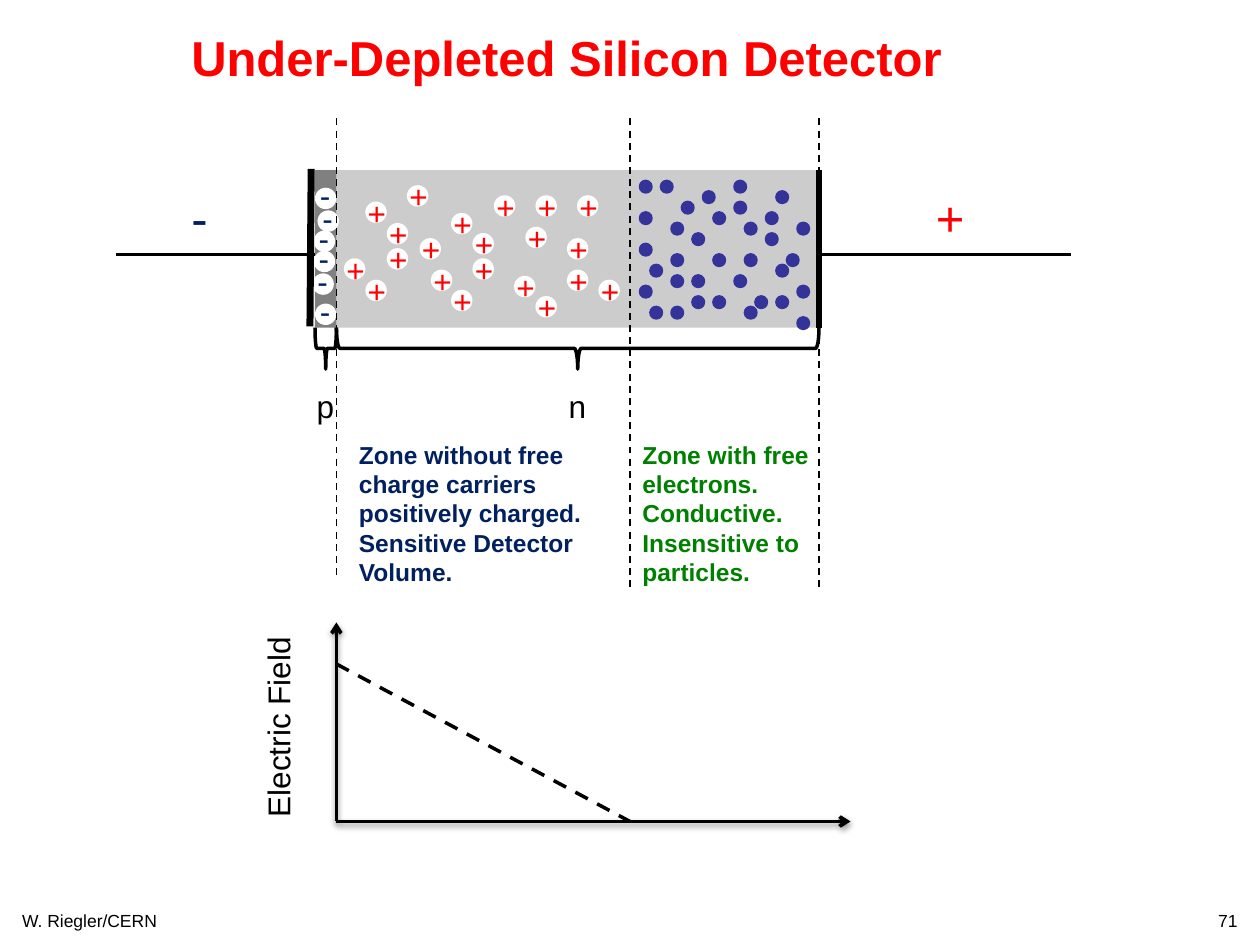
from dataclasses import dataclass
from lxml import etree
from pptx import Presentation
from pptx.dml.color import RGBColor as Rgb
from pptx.enum.dml import MSO_LINE as Dash
from pptx.enum.shapes import MSO_CONNECTOR as Wire, MSO_SHAPE as Shape
from pptx.enum.text import PP_ALIGN as Align
from pptx.oxml import parse_xml
from pptx.oxml.ns import nsdecls, qn
from pptx.util import Inches, Pt


@dataclass(frozen=True)
class Theme:
    font: str = "Arial"
    black: str = "000000"
    white: str = "FFFFFF"
    red: str = "FF0000"
    navy: str = "002060"
    green: str = "008000"
    blue: str = "333399"
    light: str = "CCCCCC"
    dark: str = "808080"
    title: int = 28
    label: int = 18
    note: int = 14
    foot: int = 10


theme = Theme()
deck = Presentation()
deck.slide_width, deck.slide_height = Inches(10), Inches(7.5)
slide = deck.slides.add_slide(deck.slide_layouts[6])
shapes = slide.shapes


def write(home, text, at, size, color, bold=False, wrap=False, align=Align.LEFT):
    box = home.add_textbox(*map(Inches, at))
    frame = box.text_frame
    frame.word_wrap = wrap
    frame.text = text
    for para in frame.paragraphs:
        para.alignment = align
        font = para.runs[0].font
        font.name, font.size, font.bold = theme.font, Pt(size), bold
        font.color.rgb = Rgb.from_string(color)
    return box


def draw(start, end, width=2, dash=None, arrow=False):
    ends = map(Inches, (*start, *end))
    wire = shapes.add_connector(Wire.STRAIGHT, *ends)
    wire.line.width = Pt(width)
    wire.line.color.rgb = Rgb.from_string(theme.black)
    if dash:
        wire.line.dash_style = dash
    props = wire._element.spPr
    effect = etree.SubElement(props, qn("a:effectLst"))
    if arrow:
        etree.SubElement(wire.line._get_or_add_ln(), qn("a:tailEnd"), type="arrow")
        effect.append(parse_xml(
            f'<a:outerShdw {nsdecls("a")} blurRad="40000" dist="20000" dir="5400000" '
            f'rotWithShape="0"><a:srgbClr val="{theme.black}"><a:alpha val="38000"/>'
            '</a:srgbClr></a:outerShdw>'))


# Key positions across the detector
left, join, edge, right = 2.5, 2.67, 5, 6.5
top, base, mid = 1.35, 2.6, 2.02

# Title, footer and zone notes
write(shapes, "Under-Depleted Silicon Detector", (1.42, 0.17, 7.17, 0.57),
      theme.title, theme.red, bold=True, wrap=True)
write(shapes, "W. Riegler/CERN", (0, 7.17, 1.42, 0.34), theme.foot, theme.black,
      wrap=True, align=Align.CENTER)
write(shapes, "71", (9.5, 7.17, 0.42, 0.27), theme.foot, theme.black,
      wrap=True, align=Align.RIGHT)
write(shapes, "Zone without free charge carriers positively charged.\n"
      "Sensitive Detector Volume.", (2.75, 3.44, 2.25, 1.28),
      theme.note, theme.navy, bold=True, wrap=True)
write(shapes, "Zone with free electrons. Conductive.\nInsensitive to particles.",
      (edge, 3.44, 1.67, 1.28), theme.note, theme.green, bold=True, wrap=True)

# Doped regions
draw((right, mid), (8.5, mid))
for start, end, color in ((join, right, theme.light), (left, join, theme.dark)):
    area = shapes.add_shape(Shape.RECTANGLE, Inches(start), Inches(top),
                            Inches(end - start), Inches(base - top))
    area.fill.solid()
    area.fill.fore_color.rgb = Rgb.from_string(color)
    area.line.fill.background()
    area.shadow.inherit = False

# Free electrons: columns filled in each row of a 1/12 inch grid
step = 1 / 12
rows = ((1, 3, 10), (7, 14), (5, 10), (1, 8, 13), (4, 11, 16), (6, 13), (1,),
        (4, 8, 11, 15), (2, 14), (4, 6, 10), (1, 16), (6, 8, 12, 14),
        (2, 4, 11), (16,))
for row, cols in enumerate(rows):
    for col in cols:
        dot = shapes.add_shape(Shape.OVAL, Inches(edge + col * step),
                               Inches(1.44 + row * step), Inches(step), Inches(step))
        dot.fill.solid()
        dot.fill.fore_color.rgb = Rgb.from_string(theme.blue)
        dot.line.color.rgb = Rgb.from_string(theme.blue)
        dot.line.width = Pt(2)
        dot.shadow.inherit = False

# Fixed charges: a white disc with its sign
plus = ((3.58, 1.69), (3.75, 1.85), (3.92, 1.55), (4.08, 2.19), (4.25, 2.35),
        (3.42, 2.14), (4.17, 1.8), (3.58, 2.3), (3.75, 2.05), (2.9, 1.6),
        (3.07, 1.77), (3.23, 1.47), (4.25, 1.55), (2.73, 2.05), (3.33, 1.89),
        (2.9, 2.22), (3.07, 1.97), (4.5, 1.89), (4.58, 1.55), (4.75, 2.22),
        (4.5, 2.14))
minus = ((2.5, 2.41), (2.48, 2.17), (2.49, 1.99), (2.49, 1.83), (2.5, 1.49),
         (2.52, 1.67))
for sign, color, width, dx, dy, spots in (
        ("+", theme.red, 0.35, 0.08, 0.11, plus),
        ("-", theme.navy, 0.29, 0.06, 0.14, minus)):
    for x, y in spots:
        pair = shapes.add_group_shape().shapes
        disc = pair.add_shape(Shape.OVAL, Inches(x), Inches(y),
                              Inches(0.17), Inches(0.17))
        disc.fill.solid()
        disc.fill.fore_color.rgb = Rgb.from_string(theme.white)
        disc.line.fill.background()
        disc.shadow.inherit = False
        write(pair, sign, (x - dx, y - dy, width, 0.4), theme.label, color)

# Braces, turned to open upward, with the region names
depth = 0.33
for name, start, end in (("n", join, right), ("p", left, join)):
    span, center = end - start, (start + end) / 2
    brace = shapes.add_shape(Shape.RIGHT_BRACE, Inches(center - depth / 2),
                             Inches(base + depth / 2 - span / 2),
                             Inches(depth), Inches(span))
    brace.rotation = 90
    brace.fill.background()
    brace.line.color.rgb = Rgb.from_string(theme.black)
    brace.line.width = Pt(2)
    brace.shadow.inherit = False
    write(shapes, name, (center - 0.17, 3.02, 0.34, 0.4), theme.label, theme.black)

# Electrodes, lead and polarity
draw((0.92, mid), (left, mid))
draw((right, top), (right, base), 4)
draw((2.47, 1.34), (2.46, 2.59), 4)
write(shapes, "+", (7.33, 1.44, 0.43, 0.57), theme.title, theme.red)
write(shapes, "-", (1.42, 1.44, 0.33, 0.57), theme.title, theme.navy)

# Zone limits
for x, end in ((edge, 4.69), (join, 4.6), (right, 4.69)):
    draw((x, 0.94), (x, end), 1, Dash.DASH)

# Field plot
floor = 6.52
draw((join, floor), (6.75, floor), arrow=True)
draw((join, floor), (join, 4.94), arrow=True)
draw((join, 5.27), (edge, floor), dash=Dash.DASH)
axis = write(shapes, "Electric Field", (1.38, 5.56, 1.65, 0.4), theme.label, theme.black)
axis.rotation = 270

deck.save("out.pptx")
